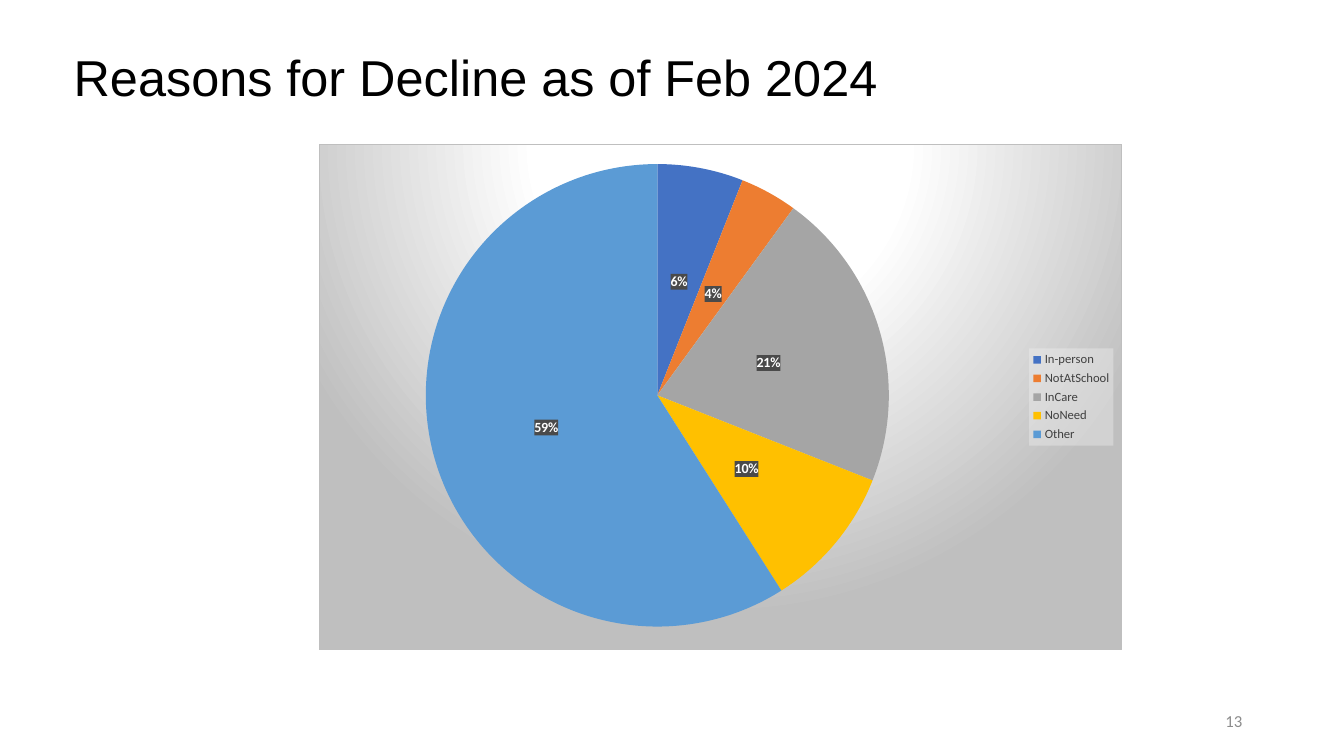
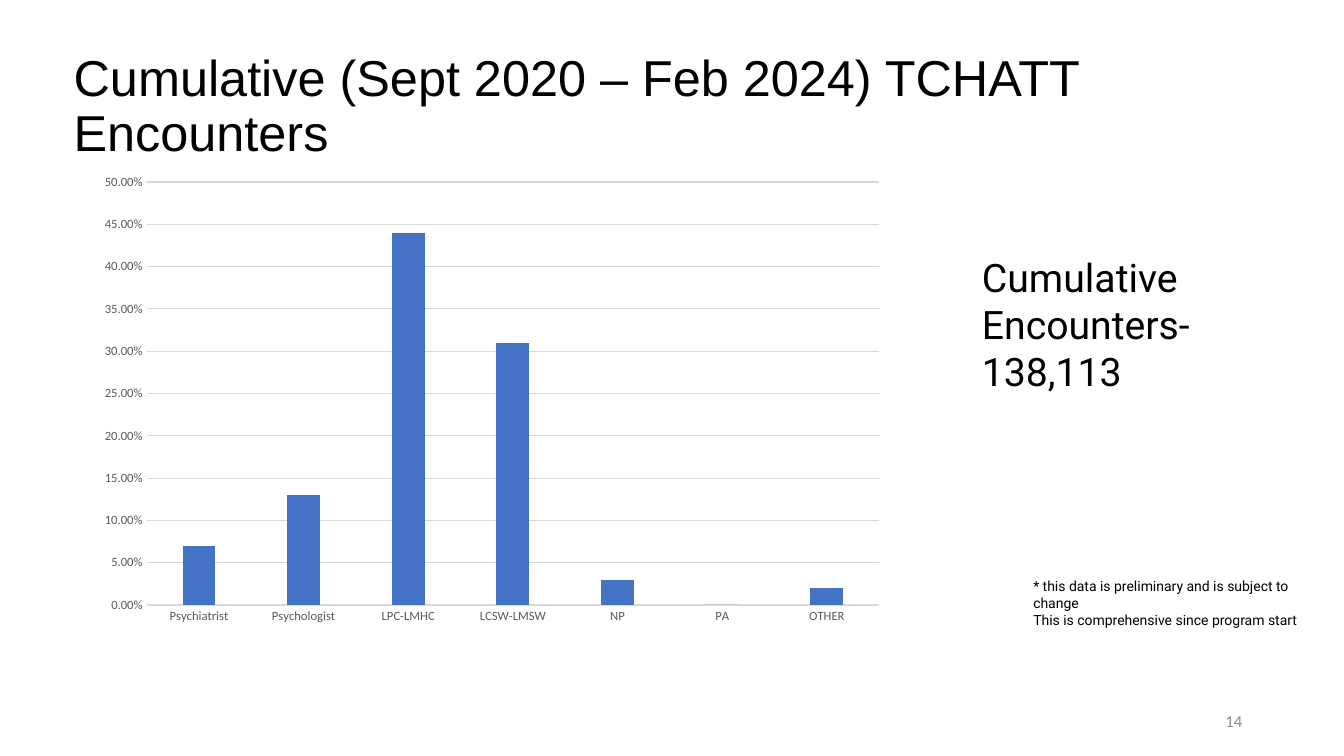
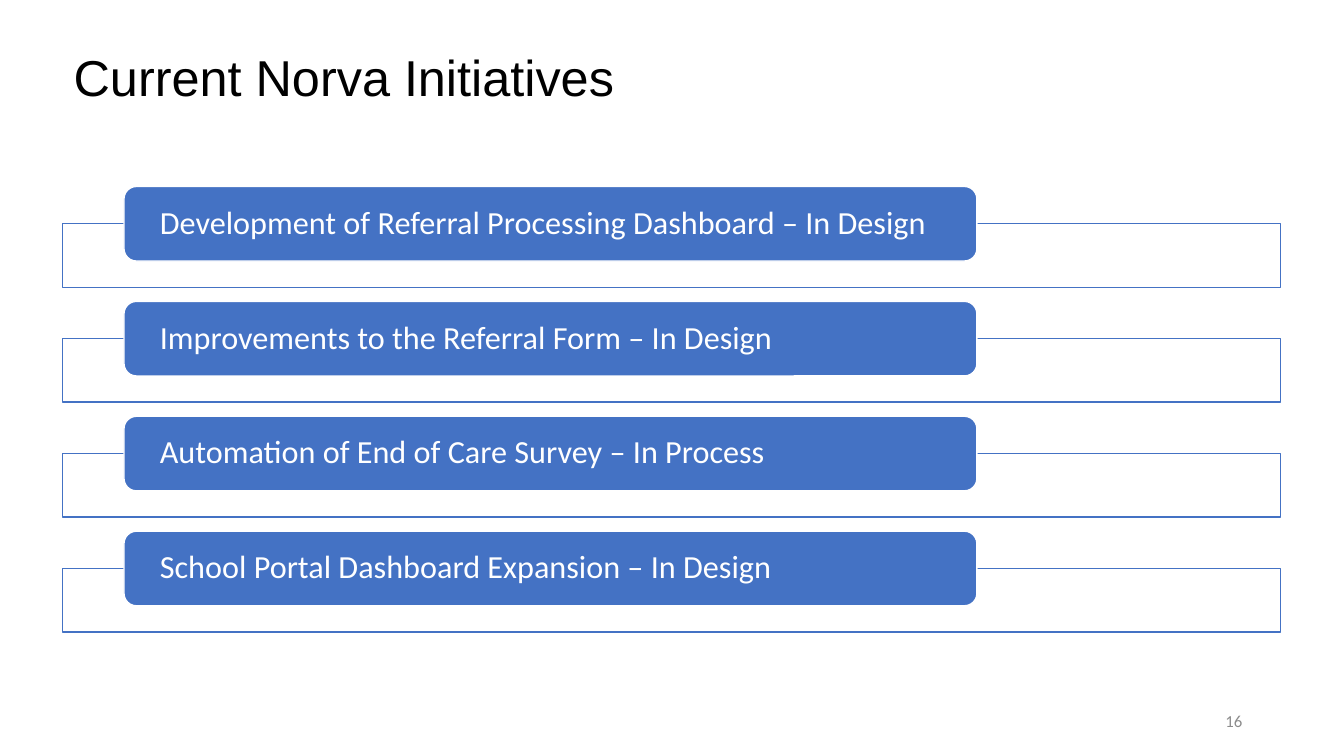
from pptx import Presentation
from pptx.chart.data import CategoryChartData
from pptx.dml.color import RGBColor
from pptx.enum.chart import XL_CHART_TYPE, XL_LABEL_POSITION, XL_LEGEND_POSITION, XL_TICK_MARK
from pptx.enum.shapes import MSO_SHAPE
from pptx.enum.text import MSO_ANCHOR, MSO_AUTO_SIZE, PP_ALIGN
from pptx.oxml import parse_xml
from pptx.oxml.ns import nsdecls, qn
from pptx.util import Inches, Pt

PIE, COLUMN = XL_CHART_TYPE.PIE, XL_CHART_TYPE.COLUMN_CLUSTERED
LEGEND_RIGHT, LABEL_CENTER = XL_LEGEND_POSITION.RIGHT, XL_LABEL_POSITION.CENTER
NO_TICK = XL_TICK_MARK.NONE
RECTANGLE, ROUNDED = MSO_SHAPE.RECTANGLE, MSO_SHAPE.ROUNDED_RECTANGLE
TOP, MIDDLE = MSO_ANCHOR.TOP, MSO_ANCHOR.MIDDLE
NO_FIT, GROW = MSO_AUTO_SIZE.NONE, MSO_AUTO_SIZE.SHAPE_TO_FIT_TEXT
LEFT, RIGHT = PP_ALIGN.LEFT, PP_ALIGN.RIGHT

COLORS = {
    "black": "000000",
    "white": "FFFFFF",
    "blue": "4472C4",
    "orange": "ED7D31",
    "gray": "A5A5A5",
    "gold": "FFC000",
    "sky": "5B9BD5",
    "silver": "BFBFBF",
    "grid": "D9D9D9",
    "axis": "595959",
    "legend": "404040",
    "legend_fill": "F2F2F2",
    "label_fill": "4A4A4A",
    "number": "8C8C8C",
}


def set_font(font, name, size, color):
    font.name = name
    font.size = Pt(size)
    font.color.rgb = RGBColor.from_string(COLORS[color])


def shape_properties(content):
    return parse_xml(f'<c:spPr {nsdecls("c", "a")}>{content}</c:spPr>')


presentation = Presentation()
presentation.slide_width = Inches(13.33)
presentation.slide_height = Inches(7.5)

slides = []
for title_text, number in [
    ("Reasons for Decline as of Feb 2024", "13"),
    ("Cumulative (Sept 2020 – Feb 2024) TCHATT Encounters", "14"),
    ("Current Norva Initiatives", "16"),
]:
    slide = presentation.slides.add_slide(presentation.slide_layouts[5])
    slides.append(slide)
    title = slide.shapes.title
    title.left, title.top = Inches(0.63), Inches(0.48)
    title.width, title.height = Inches(12.08), Inches(0.94)
    number_box = slide.shapes.add_textbox(Inches(9.42), Inches(6.95), Inches(3), Inches(0.4))
    for shape, text, anchor, alignment, spacing, style in [
        (title, title_text, TOP, LEFT, 0.9, ("Arial", 36, "black")),
        (number_box, number, MIDDLE, RIGHT, 1.0, ("Calibri", 12, "number")),
    ]:
        text_frame = shape.text_frame
        text_frame.text = text
        text_frame.word_wrap = True
        text_frame.auto_size = NO_FIT
        text_frame.vertical_anchor = anchor
        paragraph = text_frame.paragraphs[0]
        paragraph.alignment = alignment
        paragraph.line_spacing = spacing
        set_font(paragraph.runs[0].font, *style)

decline_slide, encounters_slide, initiatives_slide = slides

charts = []
for slide, chart_type, box, categories, values, number_format in [
    (decline_slide, PIE, (3.16, 1.43, 7.97, 5.02),
     ["In-person", "NotAtSchool", "InCare", "NoNeed", "Other"],
     [6, 4, 21, 10, 59], "General"),
    (encounters_slide, COLUMN, (0.88, 1.64, 8, 4.64),
     ["Psychiatrist", "Psychologist", "LPC-LMHC", "LCSW-LMSW", "NP", "PA", "OTHER"],
     [0.07, 0.13, 0.44, 0.31, 0.03, 0, 0.02], "0.00%"),
]:
    chart_data = CategoryChartData(number_format=number_format)
    chart_data.categories = categories
    chart_data.add_series("Series 1", values)
    chart = slide.shapes.add_chart(chart_type, *[Inches(length) for length in box], chart_data).chart
    chart.has_title = False
    chart.has_legend = chart_type == PIE
    set_font(chart.font, "Calibri", 10, "black")
    charts.append(chart)

pie_chart, column_chart = charts

legend = pie_chart.legend
legend.position = LEGEND_RIGHT
legend.include_in_layout = False
set_font(legend.font, "Calibri", 9, "legend")
legend_fill = shape_properties(
    f'<a:solidFill><a:srgbClr val="{COLORS["legend_fill"]}"><a:alpha val="39000"/></a:srgbClr></a:solidFill>')
legend._element.find(qn("c:txPr")).addprevious(legend_fill)

pie_chart.plots[0].vary_by_categories = True
pie_series = pie_chart.plots[0].series[0]
for index, color in enumerate(["blue", "orange", "gray", "gold", "sky"]):
    fill = pie_series.points[index].format.fill
    fill.solid()
    fill.fore_color.rgb = RGBColor.from_string(COLORS[color])

labels = pie_series.data_labels
labels.show_value = False
labels.show_percentage = True
labels.number_format = "0%"
labels.number_format_is_linked = False
labels.position = LABEL_CENTER
set_font(labels.font, "Calibri", 10, "white")
labels.font.bold = True
label_fill = shape_properties(
    f'<a:solidFill><a:srgbClr val="{COLORS["label_fill"]}"/></a:solidFill>')
labels._element.find(qn("c:txPr")).addprevious(label_fill)

stops = "".join(
    f'<a:gs pos="{position * 1000}"><a:srgbClr val="{COLORS[color]}"/></a:gs>'
    for position, color in [(0, "white"), (39, "white"), (100, "silver")])
chart_background = shape_properties(
    f'<a:gradFill><a:gsLst>{stops}</a:gsLst><a:path path="circle">'
    '<a:fillToRect l="50000" t="-80000" r="50000" b="180000"/></a:path></a:gradFill>'
    f'<a:ln w="9525"><a:solidFill><a:srgbClr val="{COLORS["silver"]}"/></a:solidFill></a:ln>')
chart_element = pie_chart._chartSpace.find(qn("c:chart"))
chart_element.addnext(chart_background)

plot_area = chart_element.find(qn("c:plotArea"))
for layout in plot_area.findall(qn("c:layout")):
    plot_area.remove(layout)
plot_area.insert(0, parse_xml(
    f'<c:layout {nsdecls("c")}><c:manualLayout><c:layoutTarget val="inner"/>'
    '<c:xMode val="edge"/><c:yMode val="edge"/><c:x val="0.133"/><c:y val="0.03"/>'
    '<c:w val="0.577"/><c:h val="0.933"/></c:manualLayout></c:layout>'))

column_plot = column_chart.plots[0]
column_plot.vary_by_categories = False
column_plot.gap_width = 219
column_plot.overlap = -27
column_fill = column_plot.series[0].format.fill
column_fill.solid()
column_fill.fore_color.rgb = RGBColor.from_string(COLORS["blue"])

category_axis, value_axis = column_chart.category_axis, column_chart.value_axis
for axis in (category_axis, value_axis):
    axis.major_tick_mark = NO_TICK
    axis.minor_tick_mark = NO_TICK
    set_font(axis.tick_labels.font, "Calibri", 9, "axis")
value_axis.minimum_scale, value_axis.maximum_scale = 0, 0.5
value_axis.major_unit = 0.05
value_axis.tick_labels.number_format = "0.00%"
value_axis.tick_labels.number_format_is_linked = False
value_axis.format.line.fill.background()
for line in (category_axis.format.line, value_axis.major_gridlines.format.line):
    line.color.rgb = RGBColor.from_string(COLORS["grid"])
    line.width = Pt(0.75)

for box, size, lines in [
    ((9.64, 2.46, 3.35, 1.51), 28, ["Cumulative Encounters- 138,113"]),
    ((10.15, 5.68, 3, 0.44), 10, ["* this data is preliminary and is subject to change",
                                  "This is comprehensive since program start"]),
]:
    text_box = encounters_slide.shapes.add_textbox(*[Inches(length) for length in box])
    text_frame = text_box.text_frame
    text_frame.word_wrap = True
    text_frame.auto_size = GROW
    text_frame.text = "\n".join(lines)
    for paragraph in text_frame.paragraphs:
        set_font(paragraph.runs[0].font, "Roboto", size, "black")

for index, initiative in enumerate([
    "Development of Referral Processing Dashboard – In Design",
    "Improvements to the Referral Form – In Design",
    "Automation of End of Care Survey – In Process",
    "School Portal Dashboard Expansion – In Design",
]):
    top = 1.85 + index * 1.14
    frame = initiatives_slide.shapes.add_shape(
        RECTANGLE, Inches(0.62), Inches(top + 0.37), Inches(12.08), Inches(0.63))
    label = initiatives_slide.shapes.add_shape(
        ROUNDED, Inches(1.23), Inches(top), Inches(8.46), Inches(0.74))
    for shape, fill_color, line_color in [(frame, "white", "blue"), (label, "blue", "white")]:
        shape.shadow.inherit = False
        shape.fill.solid()
        shape.fill.fore_color.rgb = RGBColor.from_string(COLORS[fill_color])
        shape.line.color.rgb = RGBColor.from_string(COLORS[line_color])
        shape.line.width = Pt(1)
    text_frame = label.text_frame
    text_frame.text = initiative
    text_frame.word_wrap = True
    text_frame.vertical_anchor = MIDDLE
    text_frame.margin_left = text_frame.margin_right = Inches(0.32)
    text_frame.margin_top = text_frame.margin_bottom = 0
    paragraph = text_frame.paragraphs[0]
    paragraph.alignment = LEFT
    paragraph.line_spacing = 0.9
    set_font(paragraph.runs[0].font, "Calibri", 23, "white")

presentation.save("out.pptx")
